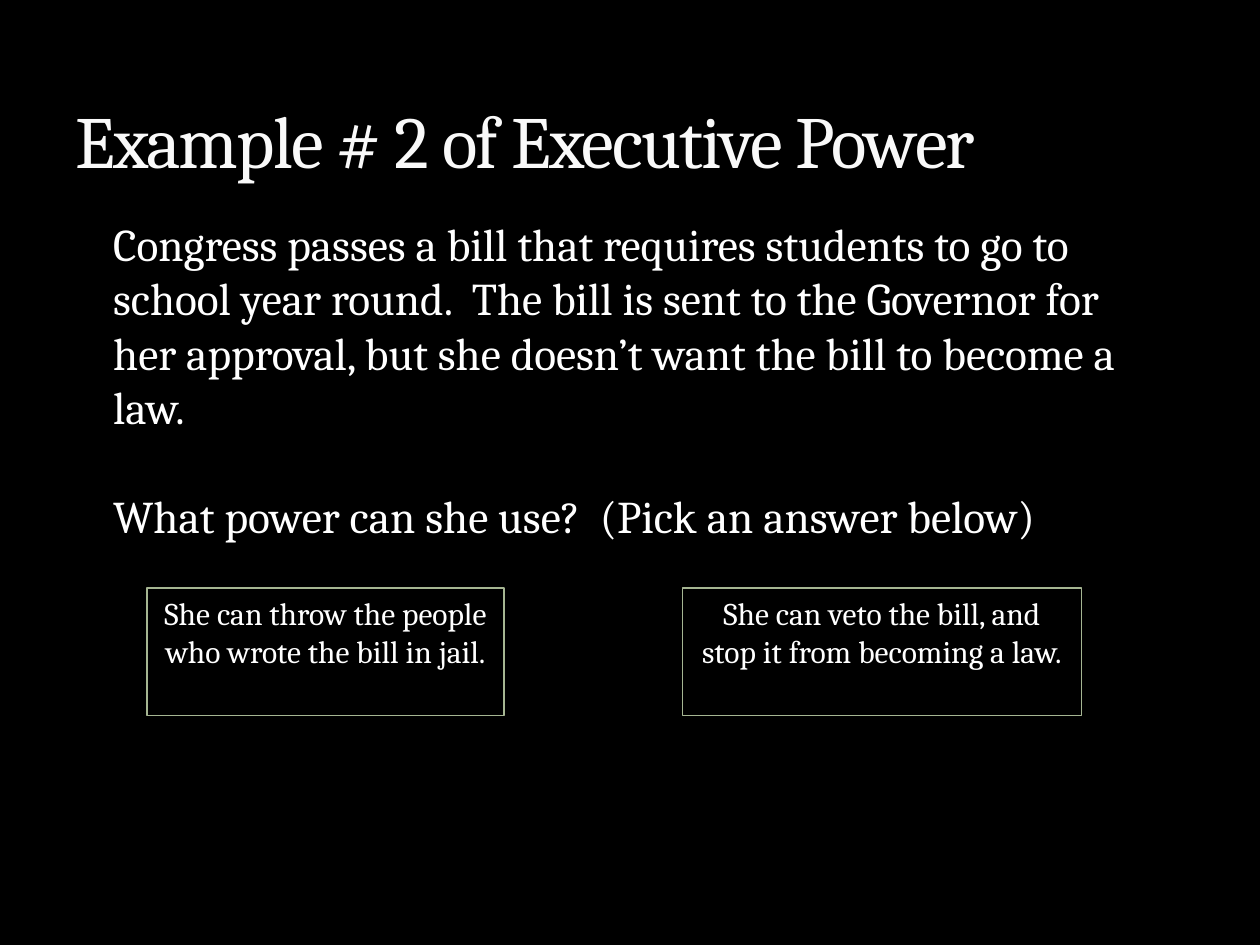
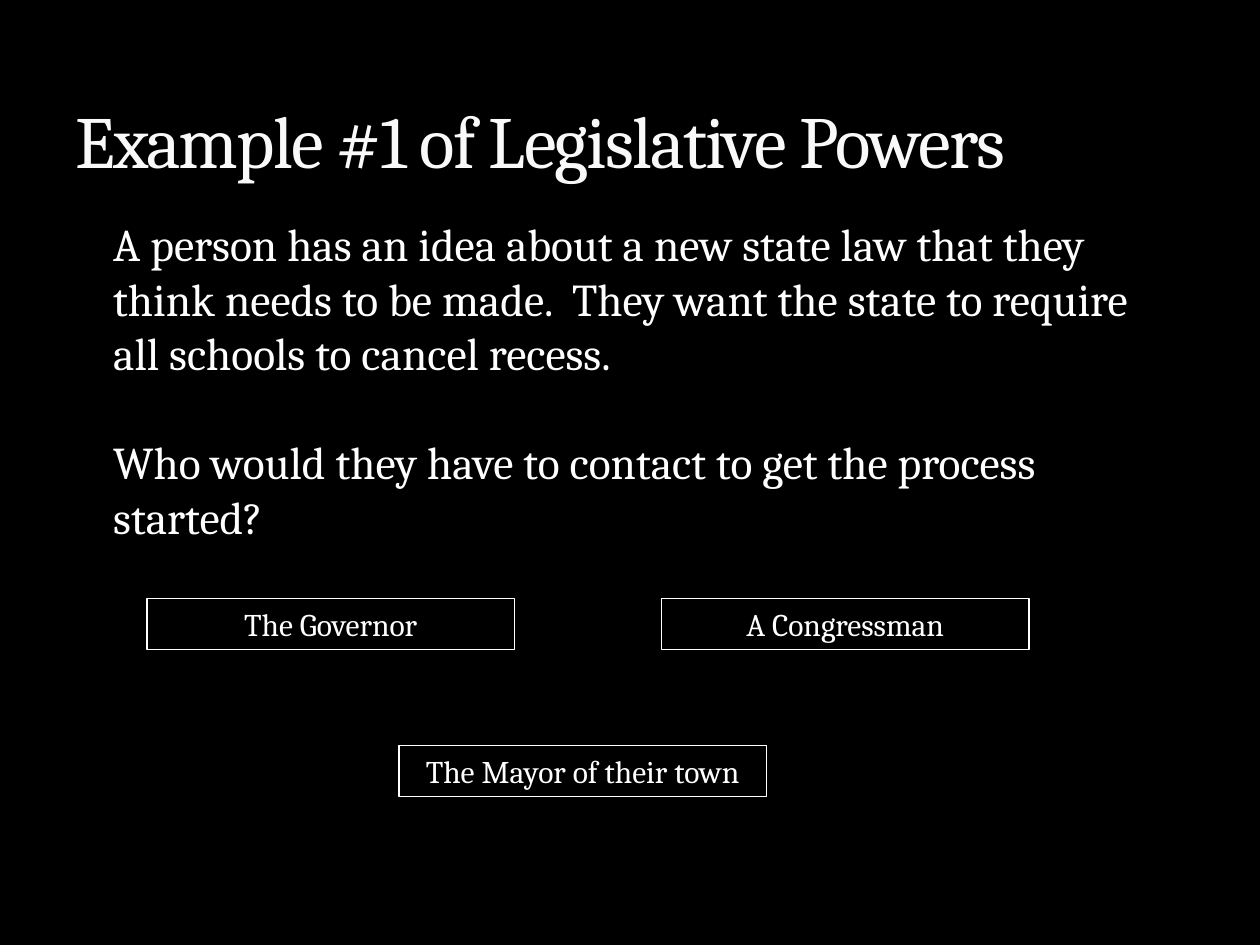
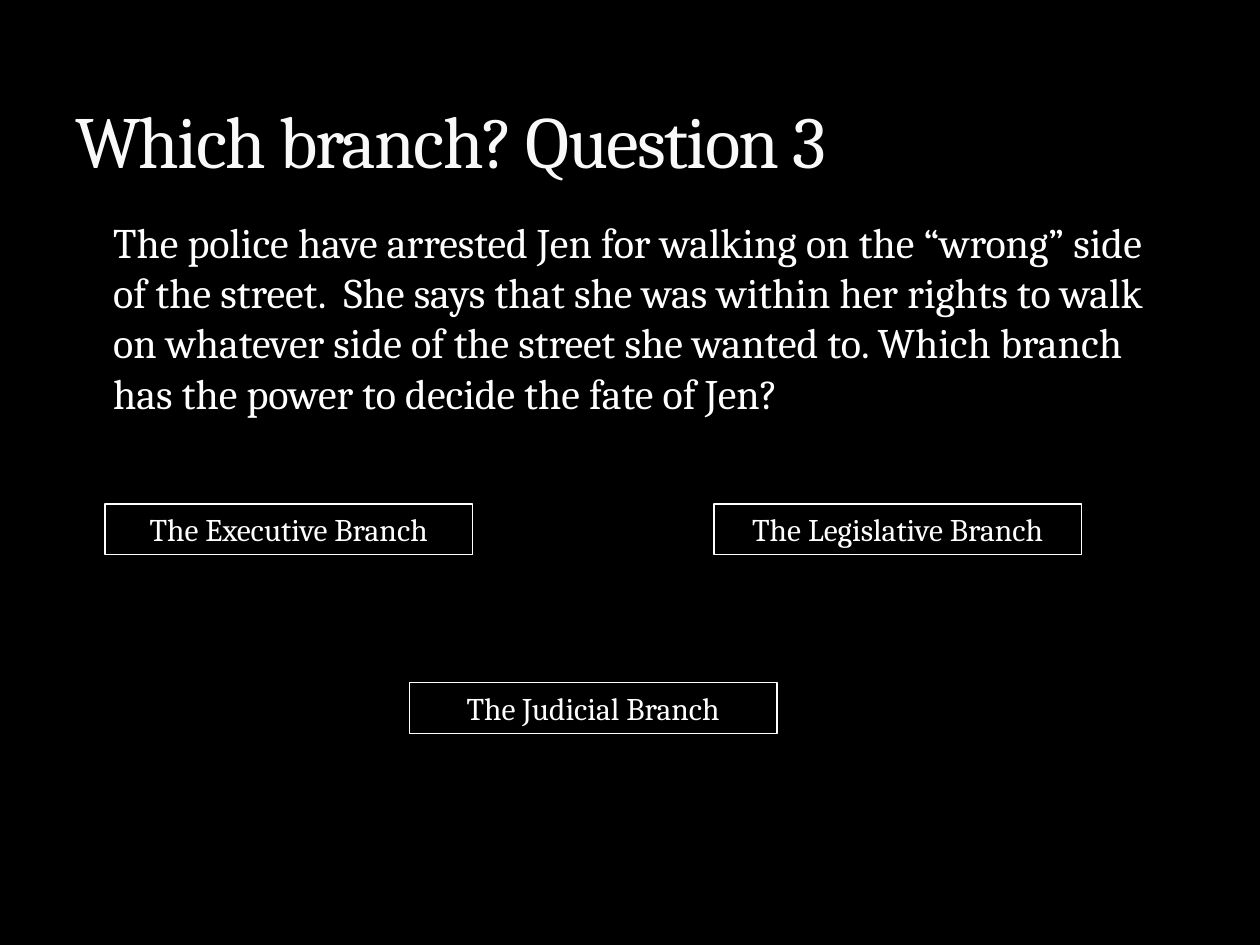
import pptx
import pptx.util
import pptx.dml.color
import pptx.enum.shapes
import pptx.enum.text
import lxml.etree

Pt = pptx.util.Pt
ALIGN = pptx.enum.text.PP_ALIGN
ANCHOR = pptx.enum.text.MSO_ANCHOR

FONT = "Cambria"
BLACK, WHITE, TITLE_WHITE, SAGE = "000000", "FFFFFF", "F9F9F9", "A5B592"
TITLE_OUTLINE = (
    '<a:ln xmlns:a="http://schemas.openxmlformats.org/drawingml/2006/main" w="3175">'
    '<a:solidFill><a:srgbClr val="3C4422"><a:alpha val="25000"/></a:srgbClr></a:solidFill></a:ln>'
)


def color(value):
    return pptx.dml.color.RGBColor.from_string(value)


def write_text(shape, paragraphs, size, font_color, alignment=ALIGN.LEFT, anchor=ANCHOR.TOP):
    frame = shape.text_frame
    frame.word_wrap = True
    frame.vertical_anchor = anchor
    frame.text = "\n".join(paragraphs)
    for paragraph in frame.paragraphs:
        paragraph.alignment = alignment
        font = paragraph.runs[0].font
        font.name = FONT
        font.size = Pt(size)
        font.color.rgb = color(font_color)
    return frame.paragraphs


slides = [
    {
        "title": "Example # 2 of Executive Power",
        "body": [
            "Congress passes a bill that requires students to go to school year round.  The bill is sent "
            "to the Governor for her approval, but she doesn’t want the bill to become a law.",
            "What power can she use?  (Pick an answer below)",
        ],
        "body_box": (618, 174),
        "body_size": 25.9,
        "line": SAGE,
        "answer_height": 73,
        "answers": [
            ("She can throw the people who wrote the bill in jail.", 84, 336, 204),
            ("She can veto the bill, and stop it from becoming a law.", 390, 336, 228),
        ],
    },
    {
        "title": "Example #1 of Legislative Powers",
        "body": [
            "A person has an idea about a new state law that they think needs to be made.  They want "
            "the state to require all schools to cancel recess.",
            "Who would they have to contact to get the process started?",
        ],
        "body_box": (636, 216),
        "body_size": 26,
        "line": WHITE,
        "answer_height": 29,
        "answers": [
            ("The Governor", 84, 342, 210),
            ("A Congressman", 378, 342, 210),
            ("The Mayor of their town", 228, 426, 210),
        ],
    },
    {
        "title": "Which branch? Question 3",
        "body": [
            "The police have arrested Jen for walking on the “wrong” side of the street.  She says that "
            "she was within her rights to walk on whatever side of the street she wanted to. Which "
            "branch has the power to decide the fate of Jen?",
        ],
        "body_box": (626, 144),
        "body_size": 24,
        "line": WHITE,
        "answer_height": 29,
        "answers": [
            ("The Executive Branch", 60, 288, 210),
            ("The Judicial Branch", 234, 390, 210),
            ("The Legislative Branch", 408, 288, 210),
        ],
    },
]

presentation = pptx.Presentation()
presentation.slide_width = Pt(720)
presentation.slide_height = Pt(540)

for content in slides:
    slide = presentation.slides.add_slide(presentation.slide_layouts[6])
    slide.background.fill.solid()
    slide.background.fill.fore_color.rgb = color(BLACK)

    title = slide.shapes.add_textbox(Pt(36), Pt(12), Pt(648), Pt(96))
    title_paragraphs = write_text(title, [content["title"]], 42, TITLE_WHITE, anchor=ANCHOR.BOTTOM)
    title_properties = title_paragraphs[0].runs[0].font._element
    title_properties.set("spc", "-100")
    title_properties.insert(0, lxml.etree.fromstring(TITLE_OUTLINE))

    body_width, body_height = content["body_box"]
    body = slide.shapes.add_textbox(Pt(36), Pt(120), Pt(body_width), Pt(body_height))
    body_paragraphs = write_text(body, content["body"], content["body_size"], WHITE)
    for index, paragraph in enumerate(body_paragraphs):
        paragraph.space_before = Pt(31 if index else 6)
        paragraph._p.get_or_add_pPr().set("marL", str(Pt(21.6)))

    for text, left, top, width in content["answers"]:
        answer = slide.shapes.add_shape(
            pptx.enum.shapes.MSO_SHAPE.RECTANGLE,
            Pt(left), Pt(top), Pt(width), Pt(content["answer_height"]),
        )
        answer.shadow.inherit = False
        answer.fill.background()
        answer.line.color.rgb = color(content["line"])
        answer.line.width = Pt(0.75)
        write_text(answer, [text], 18, WHITE, ALIGN.CENTER)

presentation.save("out.pptx")
